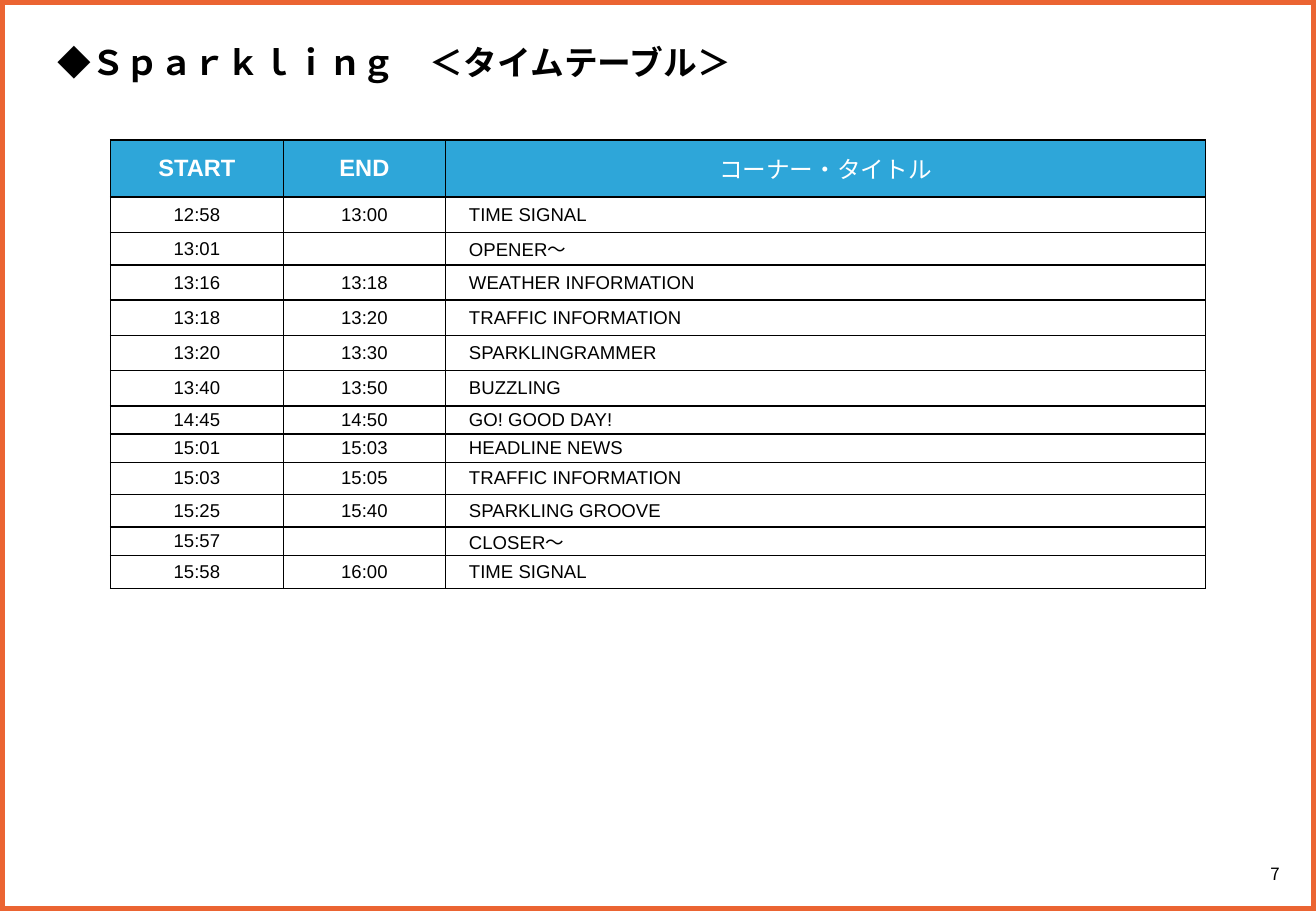
"""Build the Sparkling programme timetable slide."""
from dataclasses import dataclass

from lxml.etree import SubElement
from pptx import Presentation
from pptx.dml.color import RGBColor
from pptx.enum.shapes import MSO_SHAPE
from pptx.enum.text import MSO_ANCHOR, MSO_AUTO_SIZE, PP_ALIGN
from pptx.oxml.ns import qn
from pptx.slide import Slide
from pptx.table import _Cell
from pptx.text.text import TextFrame
from pptx.util import Pt

BLACK = RGBColor(0x00, 0x00, 0x00)
WHITE = RGBColor(0xFF, 0xFF, 0xFF)
ORANGE = RGBColor(0xEB, 0x64, 0x32)
BLUE = RGBColor(0x2E, 0xA6, 0xD9)
LATIN_FONT = "Arial"
JAPANESE_FONT = "Noto Sans CJK JP"
SLIDE_WIDTH, SLIDE_HEIGHT = 780, 540
TABLE_LEFT, TABLE_TOP = 65.5, 83
COLUMN_WIDTHS = (102.4, 96.2, 450.6)
HEADER_HEIGHT = 33.8
TITLE_INDENT = 13.9


@dataclass(frozen=True)
class Corner:
    start: str
    end: str
    title: str
    height: float


HEADER = Corner("START", "END", "コーナー・タイトル", HEADER_HEIGHT)
CORNERS = (
    Corner("12:58", "13:00", "TIME SIGNAL", 21),
    Corner("13:01", "", "OPENER〜", 19.3),
    Corner("13:16", "13:18", "WEATHER INFORMATION", 20.9),
    Corner("13:18", "13:20", "TRAFFIC INFORMATION", 20.9),
    Corner("13:20", "13:30", "SPARKLINGRAMMER", 20.9),
    Corner("13:40", "13:50", "BUZZLING", 20.9),
    Corner("14:45", "14:50", "GO! GOOD DAY!", 16.7),
    Corner("15:01", "15:03", "HEADLINE NEWS", 17),
    Corner("15:03", "15:05", "TRAFFIC INFORMATION", 18.7),
    Corner("15:25", "15:40", "SPARKLING GROOVE", 19.5),
    Corner("15:57", "", "CLOSER〜", 17),
    Corner("15:58", "16:00", "TIME SIGNAL", 19.5),
)


def write_text(frame: TextFrame, text: str, *, size: float, font: str = LATIN_FONT,
               color: RGBColor = BLACK, bold: bool = False,
               align: PP_ALIGN = PP_ALIGN.CENTER) -> None:
    """Write one formatted paragraph into a text frame."""
    paragraph = frame.paragraphs[0]
    paragraph.alignment = align
    if not text:
        SubElement(paragraph._p, qn("a:endParaRPr"), sz=str(size * 100))
        return
    run = paragraph.add_run()
    run.text = text
    run.font.size = Pt(size)
    run.font.bold = bold
    run.font.color.rgb = color
    run.font.name = font
    SubElement(run._r.get_or_add_rPr(), qn("a:ea"), typeface=JAPANESE_FONT)


def add_borders(cell: _Cell) -> None:
    """Draw a thin black line on each side of a cell."""
    properties = cell._tc.get_or_add_tcPr()
    for side in ("lnL", "lnR", "lnT", "lnB"):
        line = SubElement(properties, qn(f"a:{side}"), w=str(Pt(1)))
        fill = SubElement(line, qn("a:solidFill"))
        SubElement(fill, qn("a:srgbClr"), val=str(BLACK))


def format_cell(cell: _Cell, text: str, is_header: bool, is_title: bool) -> None:
    """Fill in one timetable cell."""
    add_borders(cell)
    cell.margin_left = cell.margin_right = cell.margin_top = cell.margin_bottom = Pt(0)
    cell.vertical_anchor = MSO_ANCHOR.MIDDLE
    if is_header:
        cell.fill.solid()
        cell.fill.fore_color.rgb = BLUE
        write_text(cell.text_frame, text, size=14, color=WHITE, bold=not is_title)
        return
    cell.fill.background()
    if is_title:
        cell.margin_left = Pt(TITLE_INDENT)
    write_text(cell.text_frame, text, size=11,
               align=PP_ALIGN.LEFT if is_title else PP_ALIGN.CENTER)


def add_timetable(slide: Slide) -> None:
    """Add the table with its header and one row per corner."""
    rows = (HEADER, *CORNERS)
    table = slide.shapes.add_table(
        len(rows), len(COLUMN_WIDTHS), Pt(TABLE_LEFT), Pt(TABLE_TOP),
        Pt(sum(COLUMN_WIDTHS)), Pt(sum(row.height for row in rows))).table
    table.first_row = True
    table.horz_banding = False
    for column, width in zip(table.columns, COLUMN_WIDTHS):
        column.width = Pt(width)
    for row_index, corner in enumerate(rows):
        table.rows[row_index].height = Pt(corner.height)
        for column_index, text in enumerate((corner.start, corner.end, corner.title)):
            format_cell(table.cell(row_index, column_index), text,
                        corner is HEADER, column_index == 2)


def add_frame(slide: Slide) -> None:
    """Add the orange border around the slide."""
    shape = slide.shapes.add_shape(MSO_SHAPE.RECTANGLE, Pt(0), Pt(0),
                                   Pt(SLIDE_WIDTH), Pt(SLIDE_HEIGHT))
    shape.shadow.inherit = False
    shape.fill.background()
    shape.line.color.rgb = ORANGE
    shape.line.width = Pt(6)


def add_page_number(slide: Slide) -> None:
    """Add the page number at the lower right."""
    frame = slide.shapes.add_textbox(Pt(731.5), Pt(505.5), Pt(48.5), Pt(25)).text_frame
    frame.word_wrap = True
    frame.vertical_anchor = MSO_ANCHOR.MIDDLE
    write_text(frame, "7", size=10, font=JAPANESE_FONT)


def set_title(slide: Slide) -> None:
    """Place and format the slide title."""
    title = slide.shapes.title
    title.left, title.top, title.width, title.height = Pt(27), Pt(21), Pt(595.5), Pt(31.5)
    frame = title.text_frame
    frame.auto_size = MSO_AUTO_SIZE.NONE
    frame.vertical_anchor = MSO_ANCHOR.MIDDLE
    write_text(frame, "◆Ｓｐａｒｋｌｉｎｇ　＜タイムテーブル＞", size=20,
               font=JAPANESE_FONT, bold=True, align=PP_ALIGN.LEFT)


def main() -> None:
    """Build and save the presentation."""
    presentation = Presentation()
    presentation.slide_width = Pt(SLIDE_WIDTH)
    presentation.slide_height = Pt(SLIDE_HEIGHT)
    slide = presentation.slides.add_slide(presentation.slide_layouts[5])
    add_page_number(slide)
    add_frame(slide)
    set_title(slide)
    add_timetable(slide)
    presentation.save("out.pptx")


if __name__ == "__main__":
    main()
